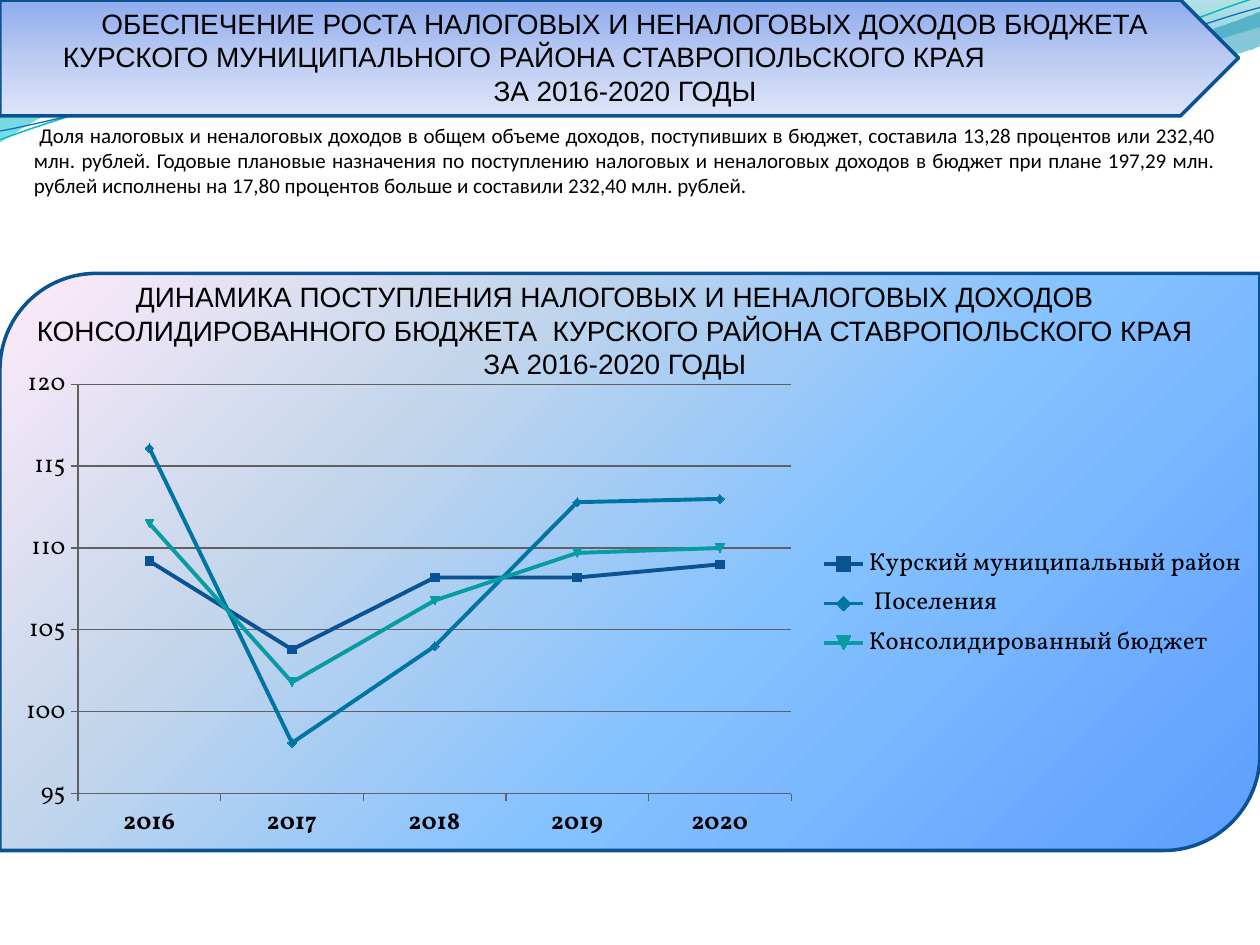
from lxml import etree
from pptx import Presentation
from pptx import util as u
from pptx.chart.data import CategoryChartData
from pptx.dml.color import RGBColor
from pptx.enum import chart as ch, shapes, text
from pptx.oxml import parse_xml
from pptx.oxml.ns import nsdecls, qn

rgb = RGBColor.from_string
NAVY, BLACK, GREY = "0B5292", "000000", "606060"


def gradient(sp, stops, angle):
    """Fill a shape with (position %, colour, opacity %) stops."""
    sp.fill.gradient()
    gs = ""
    for pos, color, alpha in stops:
        opacity = f'<a:alpha val="{alpha * 1000}"/>' if alpha < 100 else ""
        gs += f'<a:gs pos="{pos * 1000}"><a:srgbClr val="{color}">{opacity}</a:srgbClr></a:gs>'
    new = parse_xml(f'<a:gradFill {nsdecls("a")} rotWithShape="1"><a:gsLst>{gs}</a:gsLst>'
                    f'<a:lin ang="{angle * 60000}" scaled="0"/></a:gradFill>')
    old = sp._element.spPr.find(qn("a:gradFill"))
    old.getparent().replace(old, new)


def outline(parts, closed):
    """Draw a freeform from points (2 numbers) and Bezier curves (6 numbers)."""
    ends = [(u.Inches(part[-2]), u.Inches(part[-1])) for part in parts]
    fb = s.shapes.build_freeform(*ends[0])
    fb.add_line_segments(ends[1:], close=closed)
    sp = fb.convert_to_shape()
    sp.shadow.inherit = False
    # Bend the straight segments that have control points
    segments = list(sp._element.spPr.iter(qn("a:lnTo")))
    for part, segment in zip(parts[1:], segments):
        if len(part) == 6:
            curve = etree.Element(qn("a:cubicBezTo"))
            for x, y in zip(part[::2], part[1::2]):
                pt = etree.SubElement(curve, qn("a:pt"))
                pt.set("x", str(u.Inches(x) - sp.left))
                pt.set("y", str(u.Inches(y) - sp.top))
            segment.getparent().replace(segment, curve)
    return sp


prs = Presentation()
prs.slide_width, prs.slide_height = u.Inches(10), u.Inches(7.5)
s = prs.slides.add_slide(prs.slide_layouts[6])

# Waves behind the header
waves = [
    ([(0, 0), (4.4, -0.01), (4.76, 0.17, 6.64, 0.63, 7.58, 0.63),
      (8.53, 0.63, 9.58, 0.26, 10, 0.09), (10.01, 0.36),
      (9.83, 0.44, 8.7, 0.76, 7.46, 0.75), (6.22, 0.75, 3.82, 0.28, 2.57, 0.34),
      (1.29, 0.36, 0.46, 0.83, -0.01, 1.13)],
     [(0, "0074A1", 45), (100, "00C6CF", 55)]),
    ([(4.79, -0.01), (5.09, 0.11, 6.82, 0.62, 7.69, 0.65),
      (8.56, 0.69, 9.61, 0.32, 10, 0.21), (10, 0)],
     [(0, "00A1A9", 30), (80, "008BBF", 45)]),
]
for parts, stops in waves:
    sp = outline(parts, True)
    gradient(sp, stops, 90)
    sp.line.fill.background()

wave_lines = [
    ([(0, 1.11), (0.48, 0.93, 1.58, 0.57, 2.77, 0.52),
      (3.95, 0.47, 5.93, 0.89, 7.13, 0.8), (8.33, 0.71, 9.38, 0.15, 9.98, -0.02)],
     "0AB8BF", 0.85),
    ([(0, 1.04), (0.47, 0.96, 1.64, 0.61, 2.83, 0.56),
      (4.03, 0.51, 5.97, 0.84, 7.17, 0.75), (8.36, 0.67, 9.41, 0.21, 10, 0.06)],
     "0F6FC6", 0.75),
]
for parts, color, width in wave_lines:
    sp = outline(parts, False)
    sp.fill.background()
    sp.line.color.rgb = rgb(color)
    sp.line.width = u.Pt(width)

# Header arrow and chart panel
panels = [
    (shapes.MSO_SHAPE.PENTAGON, 0, 9.83, 0.92,
     [(0, "8EABEE", 100), (50, "BBCBF2", 100), (100, "DEE5F8", 100)], 90),
    (shapes.MSO_SHAPE.ROUND_2_DIAG_RECTANGLE, 2.17, 10, 4.58,
     [(0, "5E9EFF", 100), (40, "85C2FF", 100), (70, "C4D6EB", 100), (100, "FFEBFA", 100)], 225),
]
for kind, top, width, height, stops, angle in panels:
    sp = s.shapes.add_shape(kind, 0, u.Inches(top), u.Inches(width), u.Inches(height))
    sp.shadow.inherit = False
    gradient(sp, stops, angle)
    sp.line.color.rgb = rgb(NAVY)
    sp.line.width = u.Pt(2)

# Texts: box, font, size, paragraphs of (alignment, left indent, wording)
C, L, J = text.PP_ALIGN.CENTER, text.PP_ALIGN.LEFT, text.PP_ALIGN.JUSTIFY
texts = [
    ((0.17, 2.17, 9.42, 0.91), "Arial", 16, [
        (C, 0, "ДИНАМИКА ПОСТУПЛЕНИЯ НАЛОГОВЫХ И НЕНАЛОГОВЫХ ДОХОДОВ "
               "КОНСОЛИДИРОВАННОГО БЮДЖЕТА  КУРСКОГО РАЙОНА СТАВРОПОЛЬСКОГО КРАЯ "
               "ЗА 2016-2020 ГОДЫ")]),
    ((0.17, 0.92, 9.58, 0.94), "Calibri", 12, [
        (J, 0, " Доля налоговых и неналоговых доходов в общем объеме доходов, "
               "поступивших в бюджет, составила 13,28 процентов или 232,40 млн. рублей. "
               "Годовые плановые назначения по поступлению налоговых и неналоговых "
               "доходов в бюджет при плане 197,29 млн. рублей исполнены на 17,80 "
               "процентов больше и составили 232,40 млн. рублей.")]),
    ((0.25, 0, 9.42, 1.18), "Arial", 16, [
        (C, 0, "ОБЕСПЕЧЕНИЕ РОСТА НАЛОГОВЫХ И НЕНАЛОГОВЫХ ДОХОДОВ БЮДЖЕТА"),
        (L, 0.15, "КУРСКОГО МУНИЦИПАЛЬНОГО РАЙОНА СТАВРОПОЛЬСКОГО КРАЯ"),
        (C, 0, "ЗА 2016-2020 ГОДЫ")]),
]
for box, font, size, paragraphs in texts:
    tf = s.shapes.add_textbox(*map(u.Inches, box)).text_frame
    tf.word_wrap = True
    for i, (align, left, wording) in enumerate(paragraphs):
        p = tf.add_paragraph() if i else tf.paragraphs[0]
        p.alignment = align
        if left:
            p._p.get_or_add_pPr().set("marL", str(u.Inches(left)))
        r = p.add_run()
        r.text = wording
        r.font.name, r.font.size = font, u.Pt(size)
        r.font.color.rgb = rgb(BLACK)

# Revenue growth chart
series = [
    ("Курский муниципальный район", (109.2, 103.8, 108.2, 108.2, 109), NAVY),
    (" Поселения", (116.1, 98.1, 104, 112.8, 113), "0074A2"),
    ("Консолидированный бюджет", (111.5, 101.8, 106.8, 109.7, 110), "089BA2"),
]
data = CategoryChartData()
data.categories = ["2016", "2017", "2018", "2019", "2020"]
for name, values, _ in series:
    data.add_series(name, values)
chart_w, chart_h = 10, 3.92
chart = s.shapes.add_chart(ch.XL_CHART_TYPE.LINE_MARKERS, 0, u.Inches(2.83),
                           u.Inches(chart_w), u.Inches(chart_h), data).chart
chart.has_title = False
chart.font.name, chart.font.size = "Vollkorn", u.Pt(14)
chart.font.color.rgb = rgb(BLACK)
chart.has_legend = True
chart.legend.position = ch.XL_LEGEND_POSITION.RIGHT
chart.legend.include_in_layout = False
chart.plots[0].vary_by_categories = False

for ser, (_, _, color) in zip(chart.plots[0].series, series):
    ser.smooth = False
    ser.format.line.color.rgb = rgb(color)
    ser.format.line.width = u.Pt(2.25)
    ser.marker.size = 5
    ser.marker.format.fill.solid()
    ser.marker.format.fill.fore_color.rgb = rgb(color)
    ser.marker.format.line.color.rgb = rgb(color)

cat, val = chart.category_axis, chart.value_axis
cat.tick_labels.font.bold = True
val.minimum_scale, val.maximum_scale, val.major_unit = 95, 120, 5
val.has_major_gridlines = True
val.major_gridlines.format.line.color.rgb = rgb(GREY)
for axis in (cat, val):
    axis.major_tick_mark = ch.XL_TICK_MARK.OUTSIDE
    axis.format.line.color.rgb = rgb(GREY)

# Fixed plot area, as fractions of the chart
plot = chart._chartSpace.chart.plotArea
for old in plot.findall(qn("c:layout")):
    plot.remove(old)
layout = etree.Element(qn("c:layout"))
manual = etree.SubElement(layout, qn("c:manualLayout"))
for tag, value in [("layoutTarget", "inner"), ("xMode", "edge"), ("yMode", "edge"),
                   ("x", 0.62 / chart_w), ("y", 0.22 / chart_h),
                   ("w", 5.66 / chart_w), ("h", 3.25 / chart_h)]:
    etree.SubElement(manual, qn("c:" + tag)).set("val", str(value))
plot.insert(0, layout)

prs.save("out.pptx")
